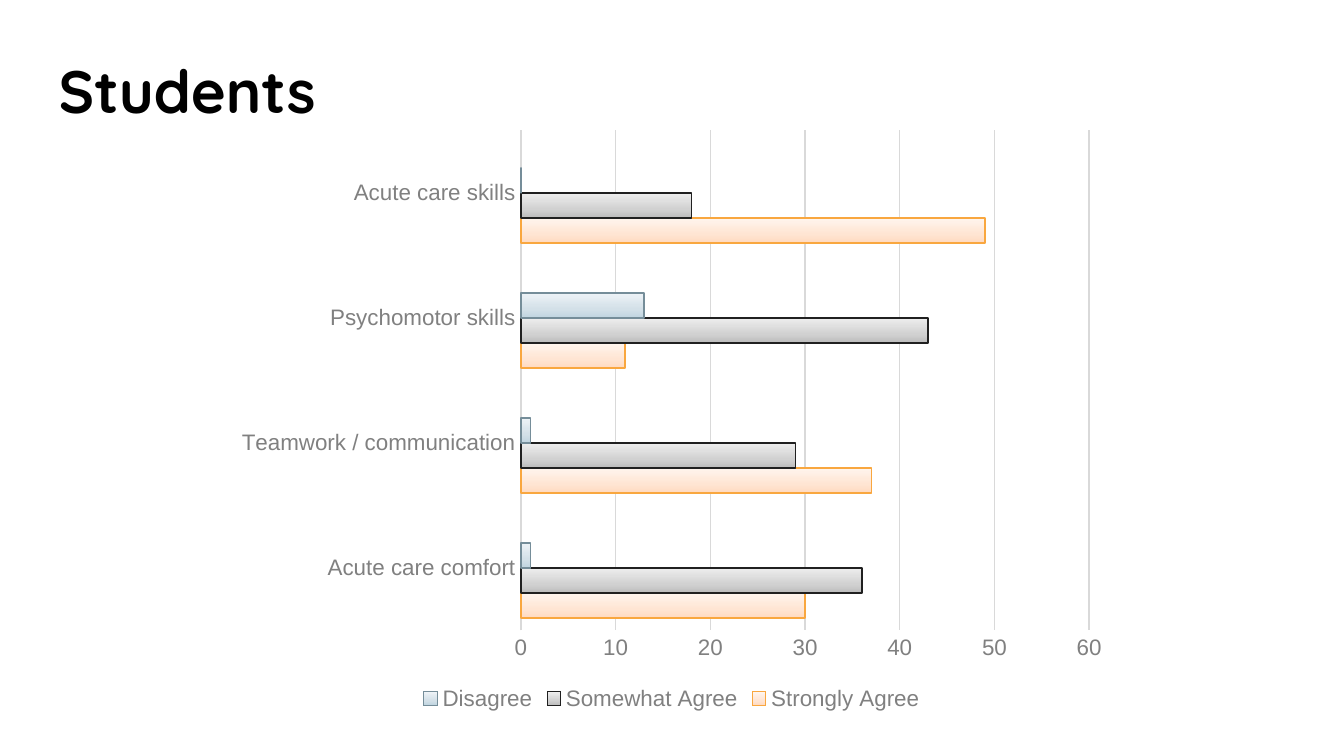
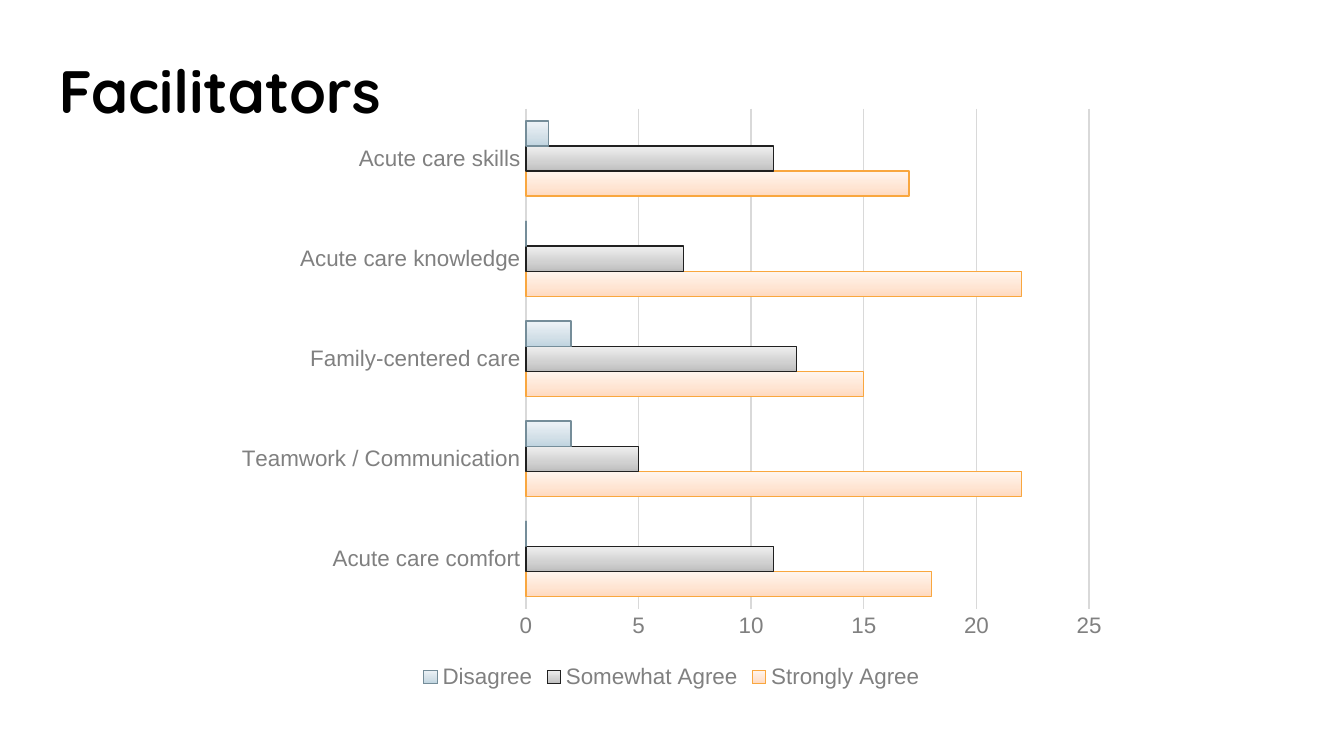
from copy import deepcopy
from dataclasses import dataclass

from pptx import Presentation
from pptx.chart.axis import CategoryAxis, ValueAxis
from pptx.chart.chart import Chart
from pptx.chart.data import CategoryChartData
from pptx.chart.series import BarSeries
from pptx.dml.color import RGBColor
from pptx.enum.chart import XL_CHART_TYPE, XL_LEGEND_POSITION, XL_TICK_MARK
from pptx.enum.text import MSO_ANCHOR, MSO_AUTO_SIZE, PP_ALIGN
from pptx.oxml import parse_xml
from pptx.oxml.ns import nsdecls, qn
from pptx.slide import Slide
from pptx.text.text import Font
from pptx.util import Cm, Pt


@dataclass(frozen=True)
class BarStyle:
    """Gradient from bottom to top, and the outline, of one answer's bars."""

    stops: tuple[str, str, str]
    outline: str


@dataclass(frozen=True)
class Theme:
    """Colours, fonts and sizes shared by the slides."""

    title_font: str = "Quicksand"
    chart_font: str = "Arial"
    title_size: int = 32
    chart_size: int = 10
    label_size: int = 12
    line_width: float = 0.75
    background: str = "FFFFFF"
    text: str = "000000"
    label: str = "808080"
    grid: str = "D9D9D9"
    stop_positions: tuple[float, float, float] = (0, 0.35, 1)
    strong: BarStyle = BarStyle(("FFDAC0", "FFE5D3", "FFF5EE"), "F9A73F")
    somewhat: BarStyle = BarStyle(("BDBDBD", "D1D1D1", "EEEEEE"), "202020")
    disagree: BarStyle = BarStyle(("C0D4E0", "D3E0E8", "EEF3F7"), "758D99")


THEME = Theme()


@dataclass(frozen=True)
class Answer:
    """One series of the survey chart."""

    name: str
    counts: tuple[int | None, ...]
    style: BarStyle


@dataclass(frozen=True)
class Survey:
    """The content of one slide."""

    title: str
    chart_top: Cm
    axis_maximum: int
    axis_step: int
    topics: tuple[str, ...]
    answers: tuple[Answer, ...]
    hide_last_answer: bool = False


SURVEYS = (
    Survey(
        "Students", Cm(2.24), 60, 10,
        ("Acute care comfort", "Teamwork / communication",
         "Psychomotor skills", "Acute care skills"),
        (
            Answer("Strongly Agree", (30, 37, 11, 49), THEME.strong),
            Answer("Somewhat Agree", (36, 29, 43, 18), THEME.somewhat),
            Answer("Disagree", (1, 1, 13, 0), THEME.disagree),
            Answer("Column1", (None,) * 4, THEME.strong),
        ),
        hide_last_answer=True,
    ),
    Survey(
        "Facilitators", Cm(1.83), 25, 5,
        ("Acute care comfort", "Teamwork / Communication",
         "Family-centered care", "Acute care knowledge", "Acute care skills"),
        (
            Answer("Strongly Agree", (18, 22, 15, 22, 17), THEME.strong),
            Answer("Somewhat Agree", (11, 5, 12, 7, 11), THEME.somewhat),
            Answer("Disagree", (0, 2, 2, 0, 1), THEME.disagree),
        ),
    ),
)


def set_font(font: Font, name: str, size: int, color: str, bold: bool = False) -> None:
    """Apply a typeface, size, colour and weight."""
    font.name = name
    font.size = Pt(size)
    font.bold = bold
    font.color.rgb = RGBColor.from_string(color)


def set_label_font(font: Font) -> None:
    """Apply the grey style of axis and legend labels."""
    set_font(font, THEME.chart_font, THEME.label_size, THEME.label)


def add_title(page: Slide, text: str) -> None:
    """Place and format the title placeholder in front of the chart."""
    title = page.shapes.title
    title.left, title.top, title.width, title.height = Cm(0.86), Cm(0.76), Cm(24.54), Cm(1.6)
    frame = title.text_frame
    frame.text = text
    frame.word_wrap = True
    frame.auto_size = MSO_AUTO_SIZE.NONE
    frame.vertical_anchor = MSO_ANCHOR.TOP
    frame.margin_left = frame.margin_top = frame.margin_right = frame.margin_bottom = Cm(0.25)
    para = frame.paragraphs[0]
    para.alignment = PP_ALIGN.LEFT
    set_font(para.font, THEME.title_font, THEME.title_size, THEME.text, bold=True)
    page.shapes._spTree.append(title._element)


def style_series(series: BarSeries, style: BarStyle) -> None:
    """Give the bars a three-stop upward gradient and an outline."""
    fill = series.format.fill
    fill.gradient()
    fill.gradient_angle = 90
    stop_list = series._element.find(".//" + qn("a:gsLst"))
    stop_list.append(deepcopy(stop_list[-1]))
    for stop, position, color in zip(fill.gradient_stops, THEME.stop_positions, style.stops):
        stop.position = position
        stop.color.rgb = RGBColor.from_string(color)
    series.format.line.color.rgb = RGBColor.from_string(style.outline)
    series.format.line.width = Pt(THEME.line_width)


def style_axis(axis: CategoryAxis | ValueAxis) -> None:
    """Remove tick marks and format the labels."""
    axis.major_tick_mark = XL_TICK_MARK.NONE
    axis.minor_tick_mark = XL_TICK_MARK.NONE
    set_label_font(axis.tick_labels.font)


def style_axes(chart: Chart, survey: Survey) -> None:
    """Format both axes and the vertical grid."""
    topics, counts = chart.category_axis, chart.value_axis
    style_axis(topics)
    style_axis(counts)
    counts.minimum_scale = 0
    counts.maximum_scale = survey.axis_maximum
    counts.major_unit = survey.axis_step
    counts.has_major_gridlines = True
    counts.format.line.fill.background()
    for line in (topics.format.line, counts.major_gridlines.format.line):
        line.color.rgb = RGBColor.from_string(THEME.grid)
        line.width = Pt(THEME.line_width)


def add_legend(chart: Chart, hide_last_answer: bool) -> None:
    """Add the bottom legend, whose entries run from the last series to the first."""
    chart.has_legend = True
    legend = chart.legend
    legend.position = XL_LEGEND_POSITION.BOTTOM
    legend.include_in_layout = False
    set_label_font(legend.font)
    if hide_last_answer:
        entry = parse_xml(
            f'<c:legendEntry {nsdecls("c")}><c:idx val="0"/><c:delete val="1"/></c:legendEntry>'
        )
        legend._element.find(qn("c:legendPos")).addnext(entry)


def add_survey_chart(page: Slide, survey: Survey) -> None:
    """Draw the clustered bars of a survey."""
    data = CategoryChartData()
    data.categories = survey.topics
    for answer in survey.answers:
        data.add_series(answer.name, answer.counts)
    chart = page.shapes.add_chart(
        XL_CHART_TYPE.BAR_CLUSTERED, Cm(4.23), survey.chart_top, Cm(16.93), Cm(11.29), data
    ).chart
    chart.has_title = False
    set_font(chart.font, THEME.chart_font, THEME.chart_size, THEME.text)
    plot = chart.plots[0]
    plot.gap_width = 100
    plot.overlap = 0
    plot.vary_by_categories = False
    for series, answer in zip(plot.series, survey.answers):
        style_series(series, answer.style)
    style_axes(chart, survey)
    add_legend(chart, survey.hide_last_answer)


def main() -> None:
    """Build and save the deck."""
    deck = Presentation()
    deck.slide_width, deck.slide_height = Cm(25.4), Cm(14.29)
    for survey in SURVEYS:
        page = deck.slides.add_slide(deck.slide_layouts[5])
        page.background.fill.solid()
        page.background.fill.fore_color.rgb = RGBColor.from_string(THEME.background)
        add_survey_chart(page, survey)
        add_title(page, survey.title)
    deck.save("out.pptx")


if __name__ == "__main__":
    main()
